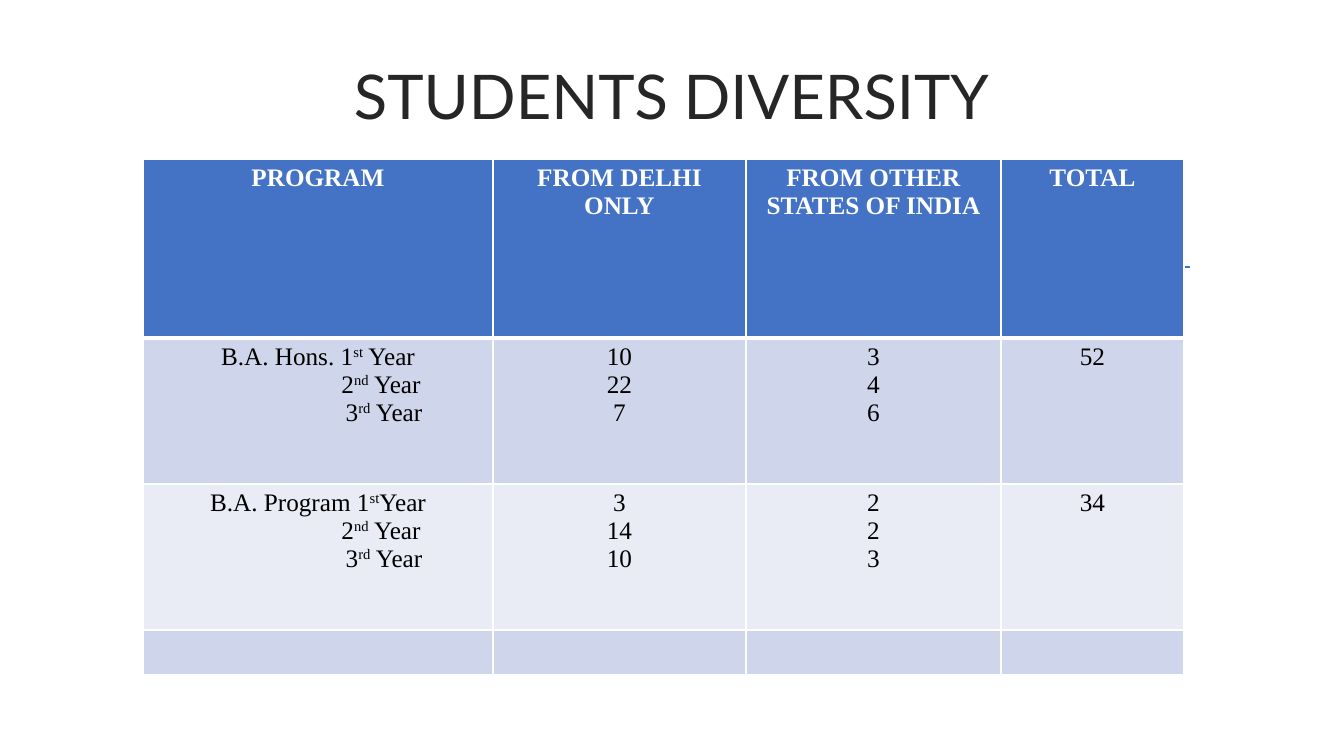
from lxml import etree
from pptx import Presentation
from pptx.dml.color import RGBColor
from pptx.enum.shapes import MSO_CONNECTOR
from pptx.enum.text import MSO_ANCHOR, PP_ALIGN
from pptx.oxml.ns import qn
from pptx.util import Pt

CENTER = PP_ALIGN.CENTER
MIDDLE = MSO_ANCHOR.MIDDLE
STRAIGHT = MSO_CONNECTOR.STRAIGHT
SCALE = 914400 / 100.8
BLUE, WHITE, BLACK = "4472C4", "FFFFFF", "000000"
BANDS = ["CFD5EA", "E9EBF5"]


def px(n):
    return round(n * SCALE)


def rgb(code):
    return RGBColor.from_string(code)


def write(tf, lines, size=18, font="Times New Roman", color=BLACK, bold=False, indents=()):
    """Fill a text frame with centred lines; parts between ^ marks are superscript."""
    for i, line in enumerate(lines):
        p = tf.paragraphs[0] if i == 0 else tf.add_paragraph()
        p.alignment = CENTER
        if i < len(indents):
            p._p.get_or_add_pPr().set("marL", str(px(indents[i])))
        for j, part in enumerate(line.split("^")):
            r = p.add_run()
            r.text = part
            r.font.size, r.font.name, r.font.bold = Pt(size), font, bold
            r.font.color.rgb = rgb(color)
            if j % 2:
                r.font._element.set("baseline", "30000")


class Deck:
    """Holds the presentation and its current slide."""

    def __init__(self, width, height):
        self.prs = Presentation()
        self.prs.slide_width, self.prs.slide_height = px(width), px(height)
        self.s = self.prs.slides.add_slide(self.prs.slide_layouts[6])

    def line(self, x1, y1, x2, y2, color, width):
        sp = self.s.shapes.add_connector(STRAIGHT, px(x1), px(y1), px(x2), px(y2))
        sp.line.color.rgb, sp.line.width = rgb(color), Pt(width)
        etree.SubElement(sp._element.spPr, qn("a:effectLst"))

    def text(self, x, y, w, h, lines, **style):
        tf = self.s.shapes.add_textbox(px(x), px(y), px(w), px(h)).text_frame
        tf.word_wrap, tf.vertical_anchor = True, MIDDLE
        write(tf, lines, **style)

    def border(self, cell, side, width):
        ln = etree.SubElement(cell._tc.get_or_add_tcPr(), qn("a:ln" + side), w=str(Pt(width)))
        fill = etree.SubElement(ln, qn("a:solidFill"))
        etree.SubElement(fill, qn("a:srgbClr"), val=WHITE)

    def table(self, x, y, widths, heights, rows, indents):
        table = self.s.shapes.add_table(
            len(heights), len(widths), px(x), px(y), px(sum(widths)), px(sum(heights))).table
        for column, w in zip(table.columns, widths):
            column.width = px(w)
        for i, (row, h, texts) in enumerate(zip(table.rows, heights, rows)):
            row.height = px(h)
            for j, (cell, lines) in enumerate(zip(row.cells, texts)):
                for side in "LRTB":
                    thick = (i, side) in [(0, "B"), (1, "T")]
                    self.border(cell, side, 3 if thick else 1)
                cell.fill.solid()
                cell.fill.fore_color.rgb = rgb(BANDS[(i - 1) % 2] if i else BLUE)
                write(cell.text_frame, lines, color=BLACK if i else WHITE, bold=i == 0,
                      indents=indents if i and j == 0 else ())


def main():
    later_years = ["2^nd^ Year", "3^rd^ Year"]
    rows = [
        [["PROGRAM"], ["FROM DELHI ONLY"], ["FROM OTHER STATES OF INDIA"], ["TOTAL"]],
        [["B.A. Hons. 1^st^ Year", *later_years], ["10", "22", "7"], ["3", "4", "6"], ["52"]],
        [["B.A. Program 1^st^Year", *later_years], ["3", "14", "10"], ["2", "2", "3"], ["34"]],
        [[]] * 4,
    ]
    deck = Deck(1344, 756)
    deck.line(154, 267, 1190, 267, BLUE, 1.25)
    deck.text(143, 51, 1058, 87, ["STUDENTS DIVERSITY"], size=44, font="Lato", color="262626")
    deck.table(143, 159, [350, 253, 255, 183], [179, 146, 146, 45], rows, indents=[0, 126, 132])
    deck.prs.save("out.pptx")


if __name__ == "__main__":
    main()
